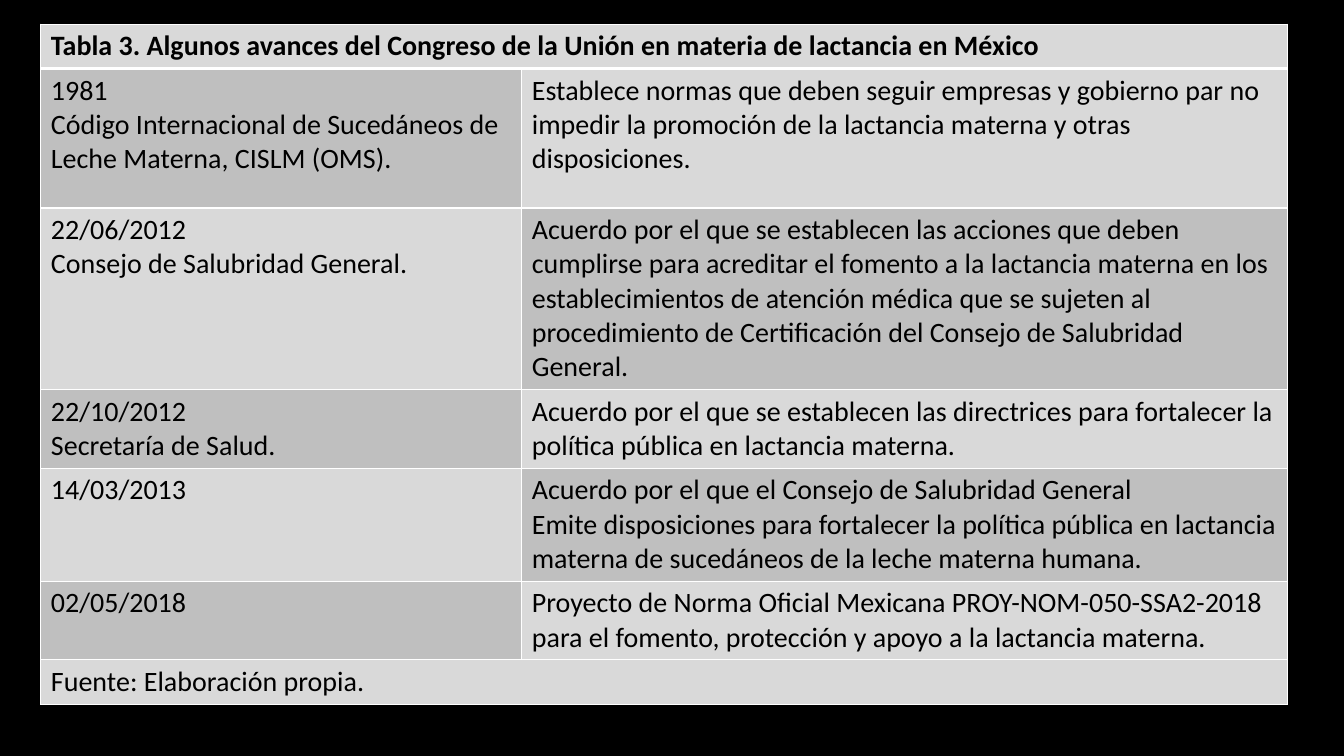
from lxml import etree
from pptx import Presentation
from pptx.dml.color import RGBColor
from pptx.enum.shapes import MSO_SHAPE
from pptx.oxml.ns import qn
from pptx.util import Cm, Pt

RECTANGLE = MSO_SHAPE.RECTANGLE
BLACK, WHITE, LIGHT, DARK = "000000", "FFFFFF", "D9D9D9", "BFBFBF"
SLIDE_WIDTH, SLIDE_HEIGHT = 33.87, 19.05
COLUMN_WIDTHS = [12.12, 19.3]
ROW_HEIGHTS = [1.07, 3.51, 3.51, 1.88, 2.69, 1.88, 1.07]
TITLE = "Tabla 3. Algunos avances del Congreso de la Unión en materia de lactancia en México"
SOURCE = "Fuente: Elaboración propia."
ADVANCES = [
    ("1981\nCódigo Internacional de Sucedáneos de Leche Materna, CISLM (OMS).",
     "Establece normas que deben seguir empresas y gobierno par no impedir la promoción "
     "de la lactancia materna y otras disposiciones."),
    ("22/06/2012\nConsejo de Salubridad General.",
     "Acuerdo por el que se establecen las acciones que deben cumplirse para acreditar el "
     "fomento a la lactancia materna en los establecimientos de atención médica que se "
     "sujeten al procedimiento de Certificación del Consejo de Salubridad General."),
    ("22/10/2012\nSecretaría de Salud.",
     "Acuerdo por el que se establecen las directrices para fortalecer la política pública "
     "en lactancia materna."),
    ("14/03/2013",
     "Acuerdo por el que el Consejo de Salubridad General\n"
     "Emite disposiciones para fortalecer la política pública en lactancia materna de "
     "sucedáneos de la leche materna humana."),
    ("02/05/2018",
     "Proyecto de Norma Oficial Mexicana PROY-NOM-050-SSA2-2018 para el fomento, "
     "protección y apoyo a la lactancia materna."),
]


def color(value):
    """Return the colour for a hex string."""
    return RGBColor.from_string(value)


def set_borders(cell, widths):
    """Draw white borders of the given widths in points, by side."""
    properties = cell._tc.get_or_add_tcPr()
    for index, side in enumerate("LRTB"):
        line = etree.Element(qn(f"a:ln{side}"), w=str(Pt(widths.get(side, 1))))
        fill = etree.SubElement(line, qn("a:solidFill"))
        etree.SubElement(fill, qn("a:srgbClr"), val=WHITE)
        properties.insert(index, line)


def style_cell(cell, fill, bold, widths):
    """Format the fill, borders and text of one cell."""
    cell.fill.solid()
    cell.fill.fore_color.rgb = color(fill)
    set_borders(cell, widths)
    for paragraph in cell.text_frame.paragraphs:
        for run in paragraph.runs:
            run.font.name = "Calibri"
            run.font.size = Pt(20)
            run.font.bold = bold
            run.font.color.rgb = color(BLACK)


def add_backdrop(slide, left, top, width, height):
    """Cover the given box with a black rectangle."""
    shape = slide.shapes.add_shape(RECTANGLE, Cm(left), Cm(top), Cm(width), Cm(height))
    shape.shadow.inherit = False
    shape.fill.solid()
    shape.fill.fore_color.rgb = color(BLACK)
    shape.line.fill.background()


def add_advances_table(slide, left, top, width, height):
    """Place the table of advances in the given box."""
    rows = [(TITLE, ""), *ADVANCES, (SOURCE, "")]
    table = slide.shapes.add_table(
        len(rows), 2, Cm(left), Cm(top), Cm(width), Cm(height)).table
    for column, column_width in zip(table.columns, COLUMN_WIDTHS):
        column.width = Cm(column_width)
    for row, row_height in zip(table.rows, ROW_HEIGHTS):
        row.height = Cm(row_height)
    last = len(rows) - 1
    for row_index, texts in enumerate(rows):
        is_band = 0 < row_index < last
        widths = {0: {"B": 3}, 1: {"T": 3}}.get(row_index, {})
        for column_index, text in enumerate(texts):
            cell = table.cell(row_index, column_index)
            cell.text_frame.text = text
            is_dark = is_band and (row_index + column_index) % 2 == 1
            style_cell(cell, DARK if is_dark else LIGHT, row_index == 0, widths)
        if not is_band:
            table.cell(row_index, 0).merge(table.cell(row_index, 1))


def main():
    """Build and save the presentation."""
    presentation = Presentation()
    presentation.slide_width = Cm(SLIDE_WIDTH)
    presentation.slide_height = Cm(SLIDE_HEIGHT)
    slide = presentation.slides.add_slide(presentation.slide_layouts[6])
    add_backdrop(slide, 0, 0, SLIDE_WIDTH, SLIDE_HEIGHT)
    add_advances_table(slide, 1.03, 0.61, sum(COLUMN_WIDTHS), sum(ROW_HEIGHTS))
    presentation.save("out.pptx")


if __name__ == "__main__":
    main()
